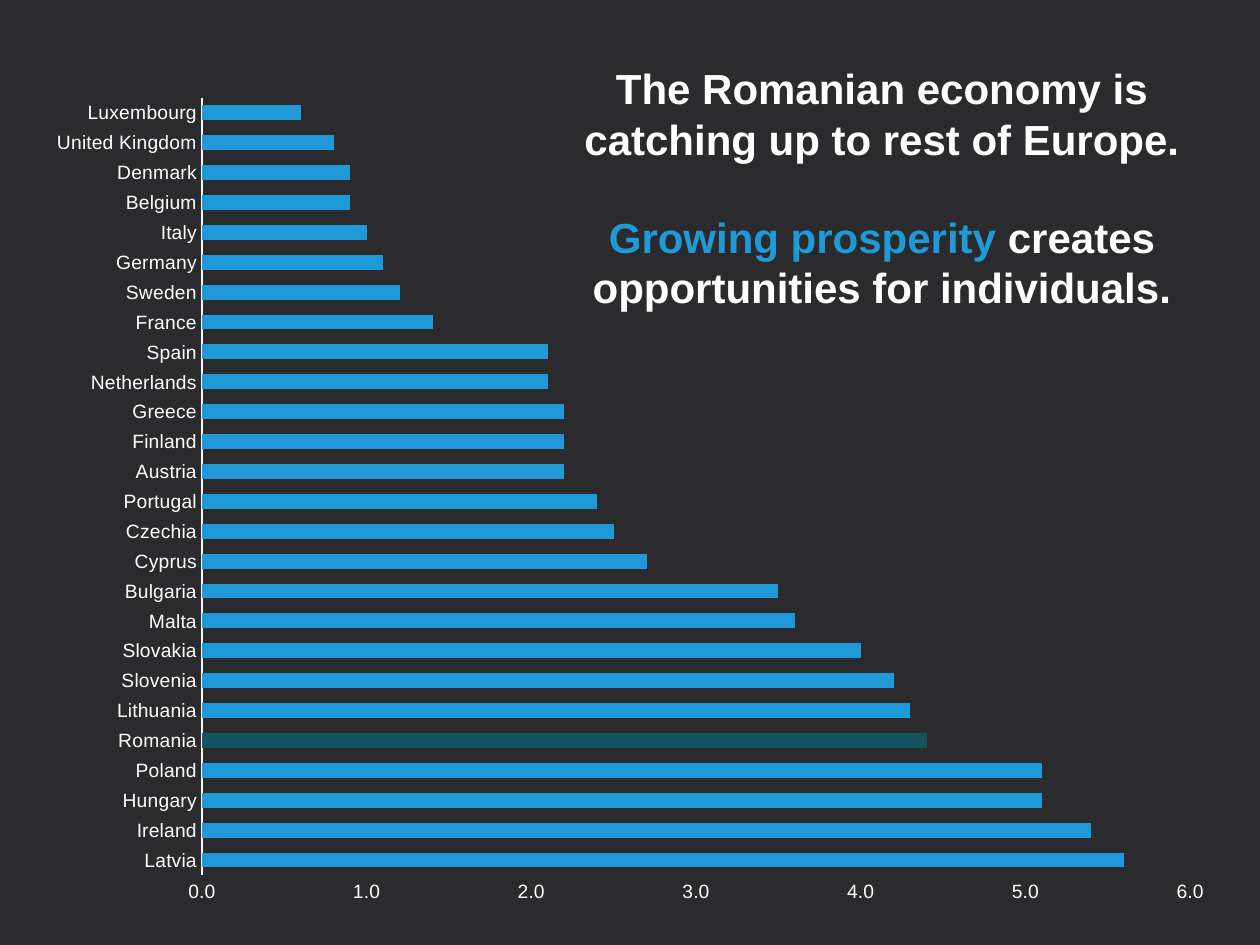
from dataclasses import dataclass

from lxml.etree import SubElement
from pptx import Presentation
from pptx.chart.data import CategoryChartData
from pptx.dml.color import RGBColor
from pptx.enum.chart import XL_CHART_TYPE, XL_TICK_MARK
from pptx.enum.text import PP_ALIGN
from pptx.oxml.ns import qn
from pptx.util import Inches, Pt


@dataclass(frozen=True)
class Theme:
    background: RGBColor = RGBColor.from_string("2B2B2D")
    text: RGBColor = RGBColor.from_string("FFFFFF")
    bar: RGBColor = RGBColor.from_string("2099D8")
    highlight: RGBColor = RGBColor.from_string("145361")
    font: str = "Arial"
    chart_font: str = "Open Sans"
    heading_size: Pt = Pt(24)
    axis_size: Pt = Pt(11)
    chart_size: Pt = Pt(10)
    axis_width: Pt = Pt(0.75)


GROWTH = {
    "Latvia": 5.6, "Ireland": 5.4, "Hungary": 5.1, "Poland": 5.1,
    "Romania": 4.4, "Lithuania": 4.3, "Slovenia": 4.2, "Slovakia": 4.0,
    "Malta": 3.6, "Bulgaria": 3.5, "Cyprus": 2.7, "Czechia": 2.5,
    "Portugal": 2.4, "Austria": 2.2, "Finland": 2.2, "Greece": 2.2,
    "Netherlands": 2.1, "Spain": 2.1, "France": 1.4, "Sweden": 1.2,
    "Germany": 1.1, "Italy": 1.0, "Belgium": 0.9, "Denmark": 0.9,
    "United Kingdom": 0.8, "Luxembourg": 0.6,
}
PLOT_LAYOUT = {"x": 0.14, "y": 0.08, "w": 0.83, "h": 0.87}


def apply(target, values):
    for name, value in values.items():
        setattr(target, name, value)


def set_plot_layout(chart, fractions):
    """Fix the inner plot area as fractions of the chart."""
    plot_area = chart.element.find(".//" + qn("c:plotArea"))
    for old_layout in plot_area.findall(qn("c:layout")):
        plot_area.remove(old_layout)
    layout = SubElement(plot_area, qn("c:layout"))
    plot_area.insert(0, layout)
    manual = SubElement(layout, qn("c:manualLayout"))
    settings = {"layoutTarget": "inner", "xMode": "edge", "yMode": "edge", **fractions}
    for name, value in settings.items():
        SubElement(manual, qn("c:" + name)).set("val", str(value))


class SlideBuilder:
    def __init__(self, slide, theme):
        self.slide = slide
        self.theme = theme
        fill = slide.background.fill
        fill.solid()
        fill.fore_color.rgb = theme.background

    def style_font(self, font, color, **values):
        apply(font, values)
        font.color.rgb = color

    def style_axis(self, axis, **values):
        common = {
            "major_tick_mark": XL_TICK_MARK.NONE,
            "minor_tick_mark": XL_TICK_MARK.NONE,
            "has_major_gridlines": False,
        }
        apply(axis, common | values)
        self.style_font(axis.tick_labels.font, self.theme.text,
                        name=self.theme.font, size=self.theme.axis_size)

    def bar_chart(self, box, values, highlighted):
        theme = self.theme
        data = CategoryChartData(number_format="0.0")
        data.categories = list(values)
        data.add_series("Series 1", list(values.values()))
        chart = self.slide.shapes.add_chart(
            XL_CHART_TYPE.BAR_CLUSTERED, *map(Inches, box), data).chart
        apply(chart, {"has_title": False, "has_legend": False})
        self.style_font(chart.font, theme.text,
                        name=theme.chart_font, size=theme.chart_size)
        set_plot_layout(chart, PLOT_LAYOUT)

        plot = chart.plots[0]
        apply(plot, {"gap_width": 100, "vary_by_categories": False})
        series = plot.series[0]
        series.invert_if_negative = False
        point = series.points[list(values).index(highlighted)]
        for item, color in ((series, theme.bar), (point, theme.highlight)):
            item.format.fill.solid()
            item.format.fill.fore_color.rgb = color

        self.style_axis(chart.category_axis)
        axis_line = chart.category_axis.format.line
        axis_line.color.rgb = theme.text
        axis_line.width = theme.axis_width
        self.style_axis(chart.value_axis, minimum_scale=0, maximum_scale=6, major_unit=1)
        chart.value_axis.format.line.fill.background()
        apply(chart.value_axis.tick_labels,
              {"number_format": "0.0", "number_format_is_linked": False})

    def heading(self, box, paragraphs, gap):
        """Write centred paragraphs, each a list of (text, color) runs."""
        frame = self.slide.shapes.add_textbox(*map(Inches, box)).text_frame
        apply(frame, {"word_wrap": True, "margin_left": 0, "margin_right": 0,
                      "margin_top": 0, "margin_bottom": 0})
        for index, runs in enumerate(paragraphs):
            paragraph = frame.add_paragraph() if index else frame.paragraphs[0]
            apply(paragraph, {"alignment": PP_ALIGN.CENTER,
                              "space_before": gap if index else Pt(0)})
            for text, color in runs:
                run = paragraph.add_run()
                run.text = text
                self.style_font(run.font, color, name=self.theme.font,
                                size=self.theme.heading_size, bold=True)


def main():
    presentation = Presentation()
    apply(presentation, {"slide_width": Inches(10), "slide_height": Inches(7.5)})
    theme = Theme()
    builder = SlideBuilder(
        presentation.slides.add_slide(presentation.slide_layouts[6]), theme)
    builder.bar_chart((0.28, 0.21, 9.45, 7.09), GROWTH, "Romania")
    builder.heading((4.5, 0.5, 5, 1.9), [
        [("The Romanian economy is catching up to rest of Europe.", theme.text)],
        [("Growing prosperity", theme.bar),
         (" creates opportunities for individuals.", theme.text)],
    ], gap=Pt(27))
    presentation.save("out.pptx")


if __name__ == "__main__":
    main()
